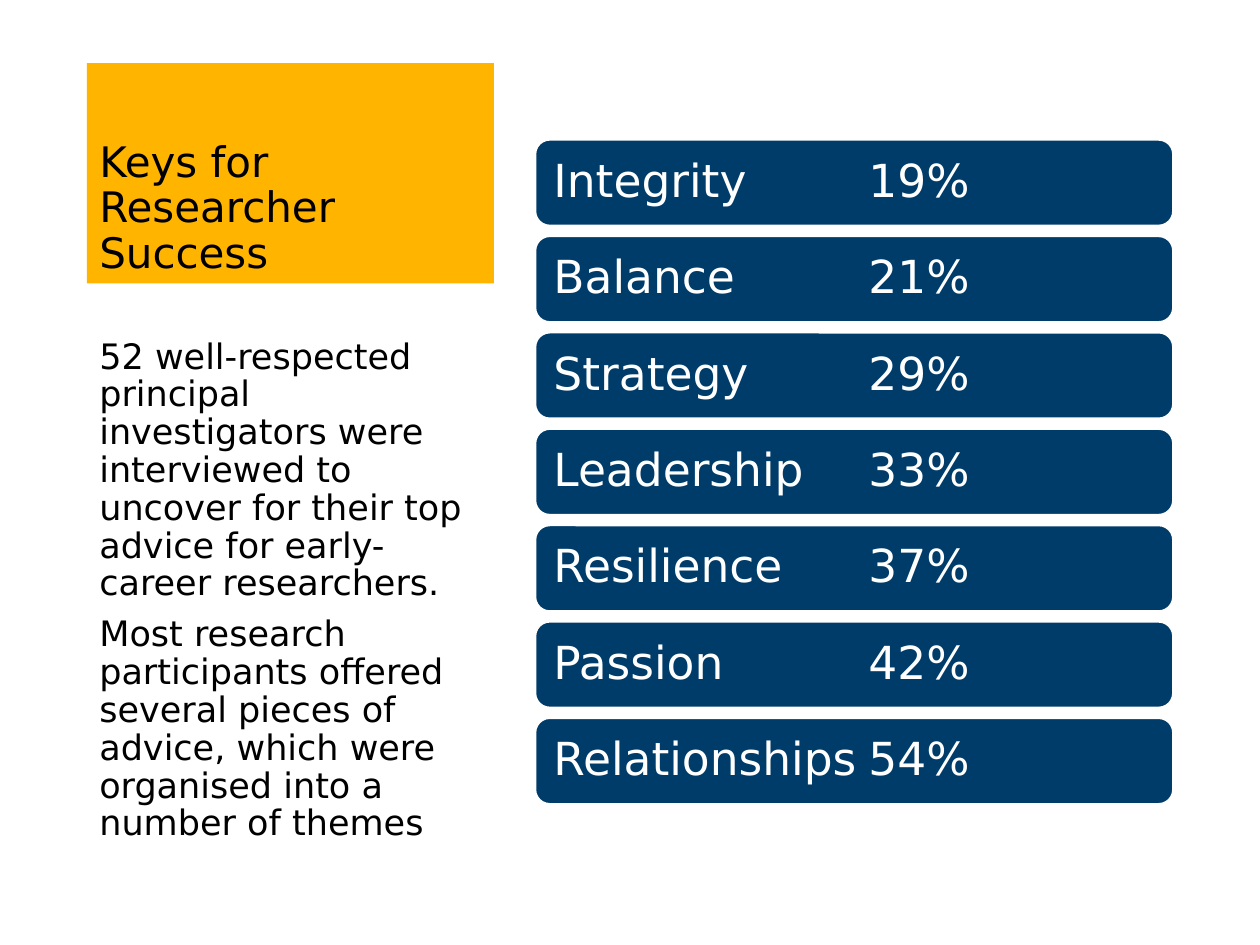
from dataclasses import dataclass

from lxml.etree import SubElement
from pptx import Presentation
from pptx.dml.color import RGBColor
from pptx.enum.shapes import MSO_SHAPE as Shape
from pptx.enum.text import MSO_ANCHOR as Anchor, PP_ALIGN as Align
from pptx.oxml.ns import qn
from pptx.util import Inches, Pt


@dataclass(frozen=True)
class Theme:
    """Colours, font and type sizes of the slide."""
    gold: RGBColor = RGBColor(0xFF, 0xB5, 0x00)
    navy: RGBColor = RGBColor(0x00, 0x3C, 0x69)
    white: RGBColor = RGBColor(0xFF, 0xFF, 0xFF)
    black: RGBColor = RGBColor(0x00, 0x00, 0x00)
    font: str = "DejaVu Sans"
    title_size: Pt = Pt(24)
    body_size: Pt = Pt(20)
    bar_size: Pt = Pt(26)


THEME = Theme()
TITLE = "Keys for Researcher Success"
BODY = [
    "52 well-respected principal investigators were interviewed to uncover "
    "for their top advice for early-career researchers.",
    "Most research participants offered several pieces of advice, which were "
    "organised into a number of themes",
]
THEMES = [
    ("Integrity", 19),
    ("Balance", 21),
    ("Strategy", 29),
    ("Leadership", 33),
    ("Resilience", 37),
    ("Passion", 42),
    ("Relationships", 54),
]


def style_paragraph(paragraph, size, color):
    """Give a paragraph its alignment, line spacing and font."""
    paragraph.alignment = Align.LEFT
    paragraph.line_spacing = 0.9
    paragraph.font.name = THEME.font
    paragraph.font.size = size
    paragraph.font.color.rgb = color


def add_title(slide, left, top, width, height):
    """Place the gold title block."""
    shape = slide.shapes.add_shape(Shape.RECTANGLE, left, top, width, height)
    shape.shadow.inherit = False
    shape.fill.solid()
    shape.fill.fore_color.rgb = THEME.gold
    shape.line.fill.background()
    frame = shape.text_frame
    frame.vertical_anchor = Anchor.BOTTOM
    frame.text = TITLE
    style_paragraph(frame.paragraphs[0], THEME.title_size, THEME.black)


def add_body(slide, left, top, width, height):
    """Place the explanatory paragraphs."""
    frame = slide.shapes.add_textbox(left, top, width, height).text_frame
    frame.word_wrap = True
    frame.text = "\n".join(BODY)
    for index, paragraph in enumerate(frame.paragraphs):
        if index:
            paragraph.space_before = Pt(7.5)
        style_paragraph(paragraph, THEME.body_size, THEME.black)


def add_bar(slide, label, percent, left, top, width, height):
    """Place one rounded bar with its label and tabbed percentage."""
    shape = slide.shapes.add_shape(Shape.ROUNDED_RECTANGLE, left, top, width, height)
    shape.shadow.inherit = False
    shape.fill.solid()
    shape.fill.fore_color.rgb = THEME.navy
    shape.line.color.rgb = THEME.white
    shape.line.width = Pt(1)
    frame = shape.text_frame
    frame.margin_left = frame.margin_right = Inches(0.11)
    frame.vertical_anchor = Anchor.MIDDLE
    paragraph = frame.paragraphs[0]
    paragraph.add_run().text = f"{label}\t{percent}%"
    tabs = SubElement(paragraph._p.get_or_add_pPr(), qn("a:tabLst"))
    SubElement(tabs, qn("a:tab"), pos=str(Inches(2.5)), algn="l")
    style_paragraph(paragraph, THEME.bar_size, THEME.white)


def add_theme_bars(slide, left, top, width, height):
    """Stack the theme bars evenly in the given box."""
    bar_height = Inches(0.68)
    pitch = (height - bar_height) // (len(THEMES) - 1)
    for index, (label, percent) in enumerate(THEMES):
        add_bar(slide, label, percent, left, top + index * pitch, width, bar_height)


def main():
    """Build and save the slide."""
    presentation = Presentation()
    presentation.slide_width = Inches(10)
    presentation.slide_height = Inches(7.5)
    slide = presentation.slides.add_slide(presentation.slide_layouts[6])
    add_title(slide, Inches(0.69), Inches(0.5), Inches(3.23), Inches(1.75))
    add_body(slide, Inches(0.69), Inches(2.64), Inches(3.23), Inches(4.65))
    add_theme_bars(slide, Inches(4.25), Inches(1.11), Inches(5.06), Inches(5.27))
    presentation.save("out.pptx")


if __name__ == "__main__":
    main()
